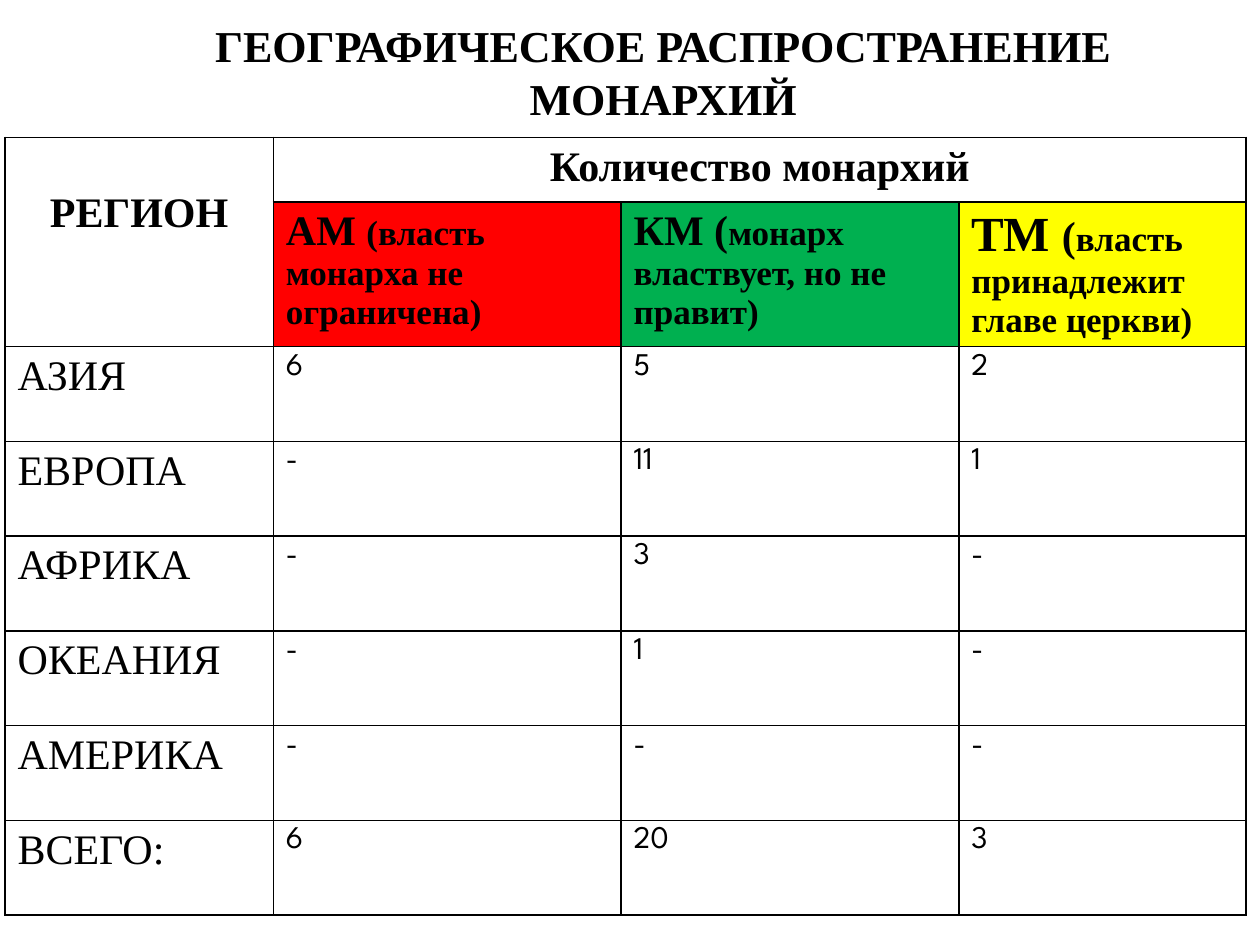
from lxml import etree
from pptx import Presentation
from pptx.dml.color import RGBColor
from pptx.enum.text import MSO_ANCHOR, MSO_AUTO_SIZE, PP_ALIGN
from pptx.oxml.ns import qn
from pptx.util import Cm, Pt

CENTER, LEFT = PP_ALIGN.CENTER, PP_ALIGN.LEFT
MIDDLE = MSO_ANCHOR.MIDDLE
NO_AUTOFIT = MSO_AUTO_SIZE.NONE
TITLE_ONLY = 5

COLORS = {
    "text": "000000",
    "paper": "FFFFFF",
    "absolute": "FF0000",
    "constitutional": "00B050",
    "theocratic": "FFFF00",
}
SERIF, SANS = "Times New Roman", "League Spartan"

COLUMN_WIDTHS = [5.41, 7.01, 6.81, 5.79]
ROW_HEIGHTS = [1.3, 2.92] + [1.91] * 6

MONARCHY_TYPES = [
    ("absolute", [("АМ ", 24), ("(власть монарха не ограничена)", 20)]),
    ("constitutional", [("КМ (", 24), ("монарх властвует, но не правит)", 20)]),
    ("theocratic", [("ТМ ", 28), ("(", 24), ("власть принадлежит главе церкви)", 20)]),
]
REGIONS = [
    ("АЗИЯ", "6", "5", "2"),
    ("ЕВРОПА", "-", "11", "1"),
    ("АФРИКА", "-", "3", "-"),
    ("ОКЕАНИЯ", "-", "1", "-"),
    ("АМЕРИКА", "-", "-", "-"),
    ("ВСЕГО:", "6", "20", "3"),
]


class SlideBuilder:
    def __init__(self, slide):
        self.slide = slide

    def color(self, key):
        return RGBColor.from_string(COLORS[key])

    def add_runs(self, frame, runs, font=SERIF, bold=False, align=LEFT):
        paragraph = frame.paragraphs[0]
        paragraph.alignment = align
        for text, size in runs:
            run = paragraph.add_run()
            run.text = text
            run.font.name = font
            run.font.size = Pt(size)
            run.font.bold = bold
            run.font.color.rgb = self.color("text")

    def title(self, text, left, top, width, height):
        heading = self.slide.shapes.title
        heading.left, heading.top = Cm(left), Cm(top)
        heading.width, heading.height = Cm(width), Cm(height)
        frame = heading.text_frame
        frame.word_wrap = True
        frame.auto_size = NO_AUTOFIT
        frame.vertical_anchor = MIDDLE
        self.add_runs(frame, [(text, 25.2)], bold=True, align=CENTER)

    def table(self, left, top, widths, heights):
        grid = self.slide.shapes.add_table(
            len(heights), len(widths), Cm(left), Cm(top), Cm(sum(widths)), Cm(sum(heights))
        ).table
        grid.first_row = grid.horz_banding = False
        for column, width in zip(grid.columns, widths):
            column.width = Cm(width)
        for row, height in zip(grid.rows, heights):
            row.height = Cm(height)
        for cell in grid.iter_cells():
            self.fill(cell, "paper")
            self.borders(cell)
        return grid

    def fill(self, cell, key):
        cell.fill.solid()
        cell.fill.fore_color.rgb = self.color(key)

    def borders(self, cell):
        properties = cell._tc.get_or_add_tcPr()
        for position, side in enumerate(("a:lnL", "a:lnR", "a:lnT", "a:lnB")):
            line = etree.Element(qn(side), w=str(Pt(1)))
            paint = etree.SubElement(line, qn("a:solidFill"))
            etree.SubElement(paint, qn("a:srgbClr"), val=COLORS["text"])
            properties.insert(position, line)


def main():
    presentation = Presentation()
    presentation.slide_width, presentation.slide_height = Cm(25.4), Cm(19.05)
    layout = presentation.slide_layouts[TITLE_ONLY]
    builder = SlideBuilder(presentation.slides.add_slide(layout))

    builder.title("ГЕОГРАФИЧЕСКОЕ РАСПРОСТРАНЕНИЕ МОНАРХИЙ", 1.9, 0.33, 22.94, 2.21)
    monarchies = builder.table(0.1, 2.77, COLUMN_WIDTHS, ROW_HEIGHTS)

    region_header = monarchies.cell(0, 0)
    region_header.merge(monarchies.cell(1, 0))
    region_header.margin_top = Cm(1.07)
    builder.add_runs(region_header.text_frame, [("РЕГИОН", 24)], bold=True, align=CENTER)

    count_header = monarchies.cell(0, 1)
    count_header.merge(monarchies.cell(0, 3))
    builder.add_runs(count_header.text_frame, [("Количество монархий", 24)], bold=True, align=CENTER)

    for column, (key, runs) in enumerate(MONARCHY_TYPES, start=1):
        type_header = monarchies.cell(1, column)
        builder.fill(type_header, key)
        builder.add_runs(type_header.text_frame, runs, bold=True)

    for row, (region, *counts) in enumerate(REGIONS, start=2):
        builder.add_runs(monarchies.cell(row, 0).text_frame, [(region, 24)])
        for column, count in enumerate(counts, start=1):
            builder.add_runs(monarchies.cell(row, column).text_frame, [(count, 18)], font=SANS)

    presentation.save("out.pptx")


if __name__ == "__main__":
    main()
